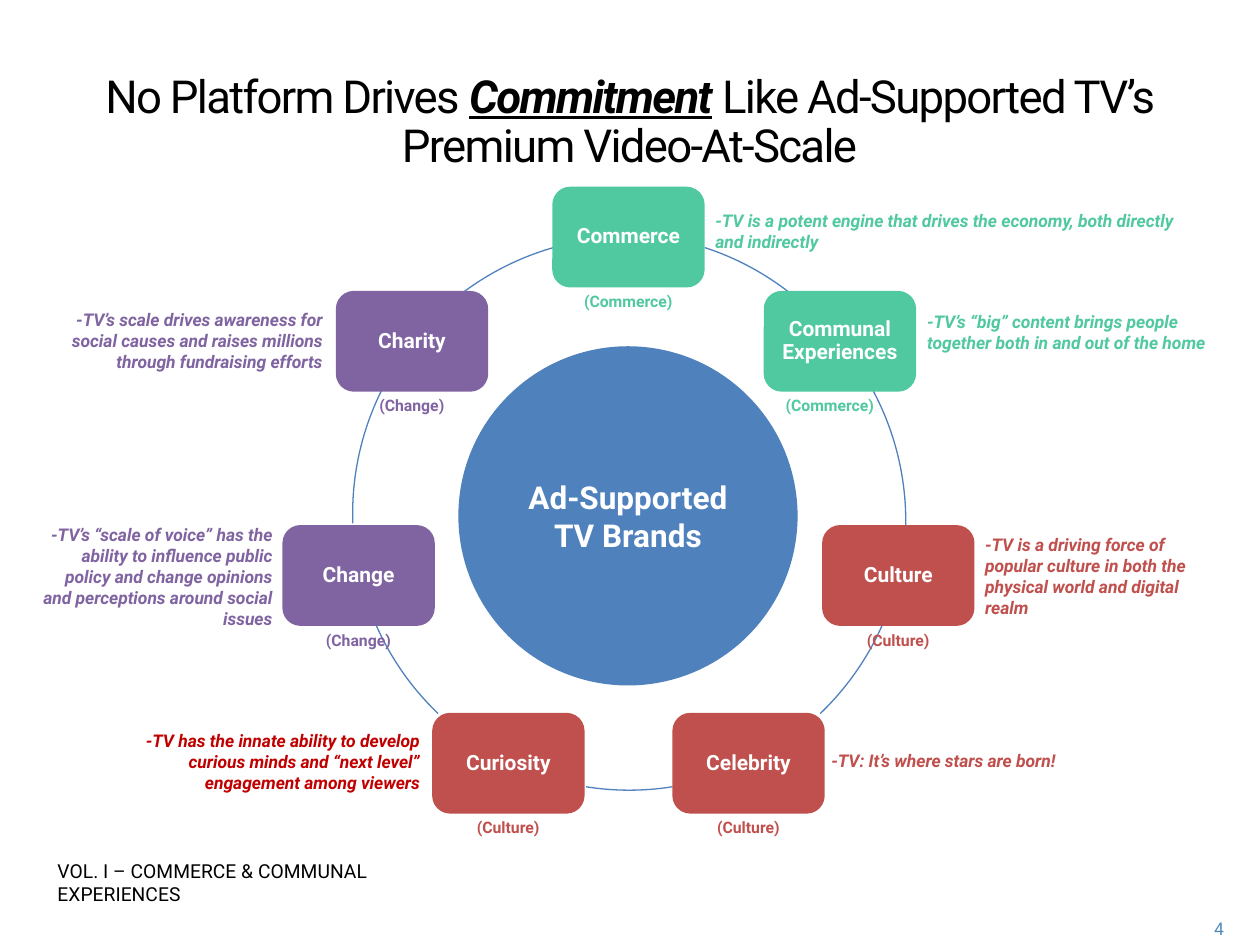
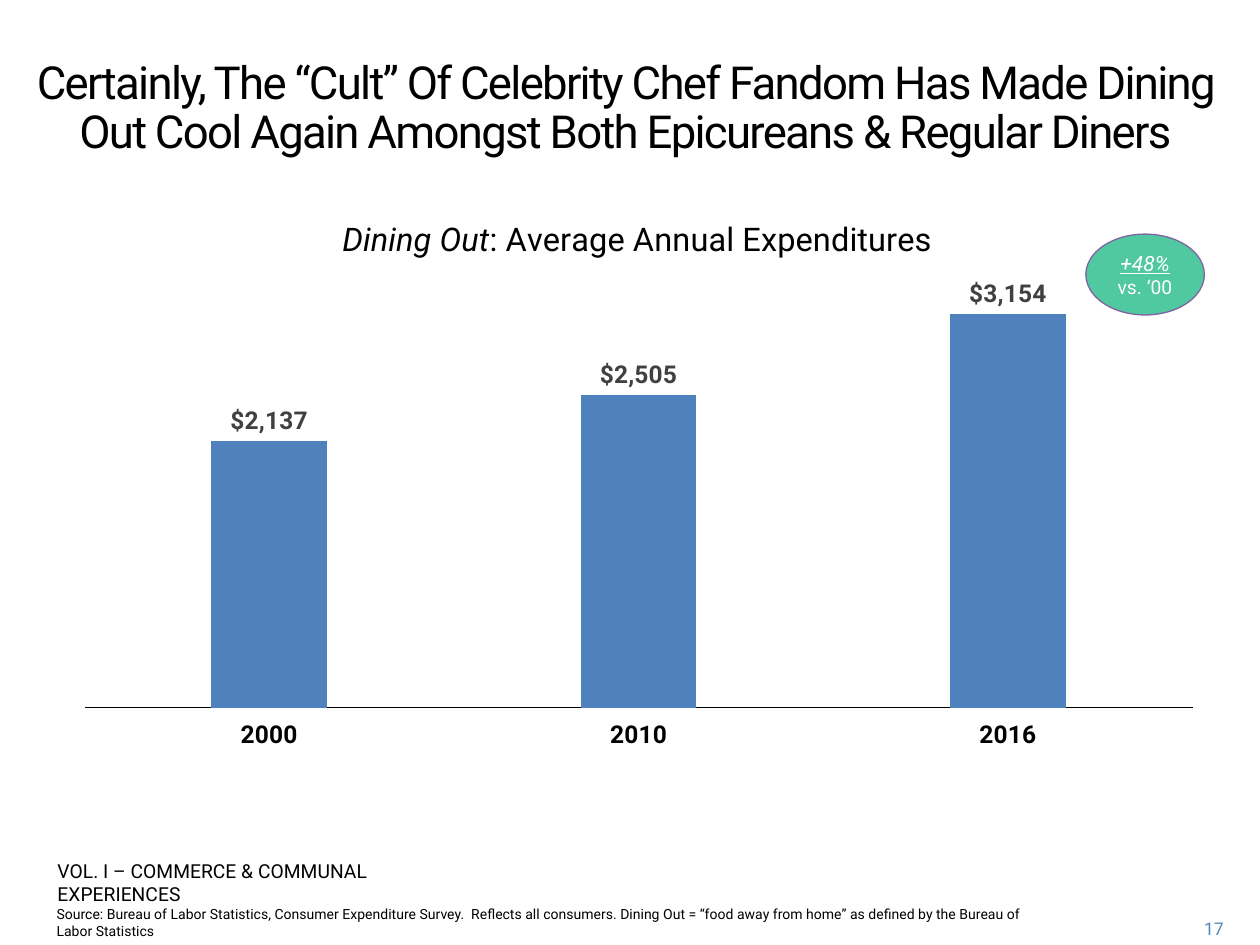
from math import cos, pi, sin
from lxml import etree
from pptx import Presentation
from pptx.chart.data import CategoryChartData
from pptx.dml.color import RGBColor
from pptx.enum.chart import XL_CHART_TYPE, XL_LABEL_POSITION, XL_TICK_LABEL_POSITION, XL_TICK_MARK
from pptx.enum.shapes import MSO_SHAPE
from pptx.enum.text import MSO_ANCHOR, PP_ALIGN
from pptx.oxml.ns import qn
from pptx.util import Cm, Pt

LEFT, MID, RIGHT = PP_ALIGN.LEFT, PP_ALIGN.CENTER, PP_ALIGN.RIGHT
TOP, CENTER = MSO_ANCHOR.TOP, MSO_ANCHOR.MIDDLE
ROUND, OVAL, ARC = MSO_SHAPE.ROUNDED_RECTANGLE, MSO_SHAPE.OVAL, MSO_SHAPE.ARC
COLUMN = XL_CHART_TYPE.COLUMN_CLUSTERED
ABOVE = XL_LABEL_POSITION.OUTSIDE_END
LOW = XL_TICK_LABEL_POSITION.LOW
NO_TICK = XL_TICK_MARK.NONE

FONT = "Roboto"
BLACK, WHITE, GRAY = "000000", "FFFFFF", "404040"
BLUE, GREEN, RED, PURPLE = "4F81BD", "50C8A0", "C0504D", "8064A2"
DARK, PAGE = "C00000", "508ABA"
color = RGBColor.from_string


def put(slide, at, runs, size, ink, align=LEFT, bold=None, italic=None,
        kind=None, fill=None, line=None, weight=0):
    at = [Cm(v) for v in at]
    if kind is None:
        shape = slide.shapes.add_textbox(*at)
    else:
        shape = slide.shapes.add_shape(kind, *at)
        shape.shadow.inherit = False
        shape.fill.solid()
        shape.fill.fore_color.rgb = color(fill)
        shape.line.color.rgb = color(line)
        shape.line.width = Pt(weight)
    frame = shape.text_frame
    frame.word_wrap = True
    frame.vertical_anchor = CENTER if kind else TOP
    para = frame.paragraphs[0]
    para.alignment = align
    font = para.font
    font.name, font.size, font.bold, font.italic = FONT, Pt(size), bold, italic
    font.color.rgb = color(ink)
    for text, style in runs:
        run = para.add_run()
        run.text = text
        if kind:
            run.font.color.rgb = color(ink)
        for name in style:
            setattr(run.font, name, True)
    return shape


def place(node, spot, **sizes):
    for old in node.findall(qn("c:layout")):
        node.remove(old)
    layout = etree.Element(qn("c:layout"))
    manual = etree.SubElement(layout, qn("c:manualLayout"))
    if "w" in sizes:
        etree.SubElement(manual, qn("c:layoutTarget")).set("val", "inner")
    for mode in ("xMode", "yMode"):
        etree.SubElement(manual, qn("c:" + mode)).set("val", "edge")
    for name, value in sizes.items():
        etree.SubElement(manual, qn("c:" + name)).set("val", str(value))
    node.insert(spot, layout)


deck = Presentation()
deck.slide_width, deck.slide_height = Cm(25.4), Cm(19.05)

heads = [
    ("4", (0.46, 1.35, 24.46, 2.06), [
        ("No Platform Drives ", ()),
        ("Commitment", ("bold", "italic", "underline")),
        (" Like Ad-Supported TV’s Premium Video-At-Scale", ())]),
    ("17", (0.15, 1.07, 24.92, 2.36), [
        ("Certainly, The “Cult” Of Celebrity Chef Fandom Has Made Dining Out Cool "
         "Again Amongst Both Epicureans & Regular Diners", ())]),
]
slides = []
for page, at, runs in heads:
    slide = deck.slides.add_slide(deck.slide_layouts[6])
    slides.append(slide)
    put(slide, (23.37, 18.39, 1.55, 0.64), [(page, ())], 10, PAGE, RIGHT)
    para = put(slide, at, runs, 26, BLACK, MID).text_frame.paragraphs[0]
    para.line_spacing = Pt(28)
    para._p.pPr.find(qn("a:defRPr")).set("spc", "-100")
    put(slide, (0.91, 17.2, 9.32, 1.19),
        [("VOL. I – COMMERCE & COMMUNAL EXPERIENCES", ())], 11, BLACK)

wheel, dining = slides

arcs = [
    (6.91, 4.72, 288, 308), (7.11, 4.93, 332, 1), (7.11, 4.78, 23.8, 46.3),
    (7.11, 4.78, 81, 99), (7.11, 4.78, 133.7, 156.2),
    (7.11, 4.78, 178, 206.5), (7.11, 4.78, 233, 254),
]
for x, y, start, end in arcs:
    arc = wheel.shapes.add_shape(ARC, Cm(x), Cm(y), Cm(11.15), Cm(11.15))
    arc.shadow.inherit = False
    arc.fill.background()
    arc.line.color.rgb = color(BLUE)
    arc.line.width = Pt(0.75)
    arc.adjustments[0] = start * 0.6
    arc.adjustments[1] = end * 0.6

topics = [
    ("Commerce", "Commerce", GREEN, GREEN, 0, LEFT, (14.17, 4.11, 9.96, 1.12),
     "-TV is a potent engine that drives the economy, both directly and indirectly"),
    ("Communal Experiences", "Commerce", GREEN, GREEN, -0.1, LEFT, (18.44, 6.15, 6.48, 1.55),
     "-TV’s “big” content brings people together both in and out of the home"),
    ("Culture", "Culture", RED, RED, 0, LEFT, (19.61, 10.64, 5.31, 1.96),
     "-TV is a driving force of popular culture in both the physical world and digital realm"),
    ("Celebrity", "Culture", RED, RED, 0, LEFT, (16.51, 14.99, 6.27, 0.69),
     "-TV: It’s where stars are born!"),
    ("Curiosity", "Culture", RED, DARK, 0, RIGHT, (2.44, 14.6, 6.27, 1.55),
     "-TV has the innate ability to develop curious minds and “next level” "
     "engagement among viewers"),
    ("Change", "Change", PURPLE, PURPLE, 0, RIGHT, (0.46, 10.44, 5.28, 2.39),
     "-TV’s “scale of voice” has the ability to influence public policy and change "
     "opinions and perceptions around social issues"),
    ("Charity", "Change", PURPLE, PURPLE, 0, RIGHT, (0.48, 6.1, 6.27, 1.55),
     "-TV’s scale drives awareness for social causes and raises millions through "
     "fundraising efforts"),
]
wide, high, reach = 3, 1.96, 5.58
for i, (name, group, fill, ink, shift, align, at, note) in enumerate(topics):
    turn = 2 * pi * i / len(topics)
    x = 12.67 + reach * sin(turn) + shift
    y = 10.36 - reach * cos(turn)
    box = put(wheel, (x - wide / 2, y - high / 2, wide, high), [(name, ())], 12, WHITE,
              MID, True, kind=ROUND, fill=fill, line=fill, weight=2)
    frame = box.text_frame
    frame.margin_left = frame.margin_right = Cm(0.13)
    frame.paragraphs[0].line_spacing = 0.9
    put(wheel, (x - 1.49 + 2 * shift, y + high / 2, 2.97, 0.64),
        [(f"({group})", ())], 9, fill, MID, True)
    put(wheel, at, [(note, ())], 10, ink, align, True, True)

put(wheel, (9.32, 7.06, 6.68, 6.68), [("Ad-Supported TV Brands", ())], 18, WHITE, MID, True,
    kind=OVAL, fill=BLUE, line=BLUE, weight=4.5)

put(dining, (0.89, 18.14, 20.55, 0.71), [
    ("Source: Bureau of Labor Statistics, Consumer Expenditure Survey.  Reflects all "
     "consumers. Dining Out = “food away from home” as defined by the Bureau of Labor "
     "Statistics", ())], 8, BLACK)

data = CategoryChartData(number_format='"$"#,##0')
data.categories = ["2000", "2010", "2016"]
data.add_series("Series 1", (2137, 2505, 3154))
chart = dining.shapes.add_chart(
    COLUMN, Cm(1.24), Cm(3.89), Cm(23.27), Cm(11.28), data).chart
chart.has_legend = False
chart.font.name, chart.font.size = FONT, Pt(10)
chart.font.color.rgb = color(BLACK)

chart.has_title = True
para = chart.chart_title.text_frame.paragraphs[0]
font = para.font
font.name, font.size, font.bold = FONT, Pt(18.6), False
font.color.rgb = color(BLACK)
for text, slant in (("Dining Out", True), (": Average Annual Expenditures", False)):
    run = para.add_run()
    run.text = text
    run.font.italic = slant
place(chart.chart_title._element, 1, x=0.24, y=0.04)
place(chart._chartSpace.chart.plotArea, 0, x=0.02, y=0.14, w=0.96, h=0.78)

axis = chart.value_axis
axis.visible = False
axis.has_major_gridlines = False
axis.minimum_scale, axis.maximum_scale = 0, 3500
axis = chart.category_axis
axis.major_tick_mark = NO_TICK
axis.tick_label_position = LOW
axis.format.line.color.rgb = color(BLACK)
axis.format.line.width = Pt(0.75)

plot = chart.plots[0]
plot.gap_width, plot.overlap, plot.vary_by_categories = 219, -27, False
bars = plot.series[0]
bars.format.fill.solid()
bars.format.fill.fore_color.rgb = color(BLUE)
labels = bars.data_labels
labels.show_value = True
labels.position = ABOVE
for font, ink in ((axis.tick_labels.font, BLACK), (labels.font, GRAY)):
    font.name, font.size, font.bold = FONT, Pt(14), True
    font.color.rgb = color(ink)

badge = put(dining, (21.89, 4.72, 2.39, 1.63),
            [("+48% ", ("italic", "underline")), ("vs. ‘00", ())], 12, WHITE, MID,
            kind=OVAL, fill=GREEN, line=PURPLE, weight=0.75)
badge.text_frame.paragraphs[0].runs[1].font.size = Pt(11)

deck.save("out.pptx")
